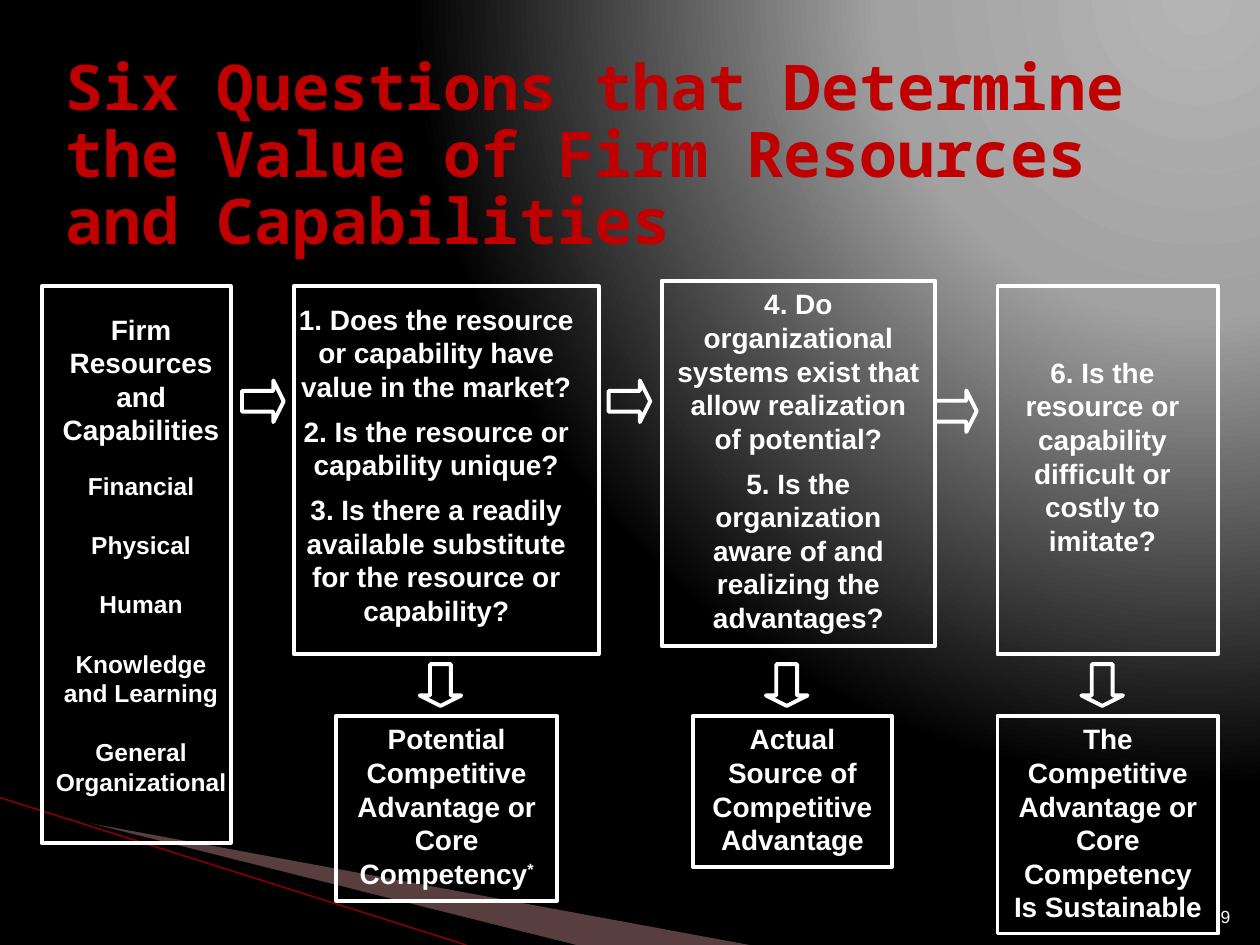
import dataclasses
import pptx
import pptx.util
import pptx.dml.color
import pptx.enum.shapes
import pptx.enum.text
import pptx.oxml
import pptx.oxml.ns

Cm, Pt = pptx.util.Cm, pptx.util.Pt
Kind = pptx.enum.shapes.MSO_SHAPE
Align = pptx.enum.text.PP_ALIGN
Anchor = pptx.enum.text.MSO_ANCHOR
qn = pptx.oxml.ns.qn
NS = 'xmlns:a="http://schemas.openxmlformats.org/drawingml/2006/main"'


@dataclasses.dataclass
class Theme:
    white: str = "FFFFFF"
    black: str = "000000"
    red: str = "C00000"
    rose: str = "DD9D9D"
    thread: str = "800000"
    glow: tuple = ((0, "B4B4B4"), (40, "A2A2A2"), (100, "000000"))
    sans: str = "Arial"
    mono: str = "Noto Sans Mono"
    title: float = 36
    body: float = 16
    item: float = 14
    note: float = 10
    edge: float = 2.25


theme = Theme()


def rgb(code):
    return pptx.dml.color.RGBColor.from_string(code)


def style(font, size, color=theme.white, name=theme.sans, bold=True):
    font.size, font.name, font.bold = Pt(size), name, bold
    font.color.rgb = rgb(color)


def write(shape, paras, align=Align.CENTER):
    frame = shape.text_frame
    frame.word_wrap = True
    frame.vertical_anchor = Anchor.TOP
    for i, (text, size, gap) in enumerate(paras):
        para = frame.paragraphs[0] if i == 0 else frame.add_paragraph()
        para.alignment = align
        para.space_before = Pt(gap)
        main, star, _ = text.partition("*")
        for part in filter(None, (main, star)):
            run = para.add_run()
            run.text = part
            style(run.font, size)
            if part == "*":
                run.font._element.set("baseline", "30000")


def outline(slide, kind, box):
    shape = slide.shapes.add_shape(kind, *map(Cm, box))
    shape.shadow.inherit = False
    shape.fill.background()
    shape.line.color.rgb = rgb(theme.white)
    shape.line.width = Pt(theme.edge)
    return shape


def panel(slide, box, paras, inner=None):
    shape = outline(slide, Kind.RECTANGLE, box)
    if inner:
        left, top, wide, high = inner
        place = (box[0] + left, box[1] + top, wide, high)
        shape = slide.shapes.add_textbox(*map(Cm, place))
    write(shape, paras)


def arrow(slide, kind, left, top):
    shape = outline(slide, kind, (left, top, 0.84, 0.84))
    shape.adjustments[0] = 0.5
    shape.adjustments[1] = 0.25


def blade(slide, points, color, alpha):
    spots = [(Cm(x), Cm(y)) for x, y in points]
    build = slide.shapes.build_freeform(*spots[0])
    build.add_line_segments(spots[1:], close=True)
    shape = build.convert_to_shape()
    shape.shadow.inherit = False
    shape.fill.solid()
    shape.fill.fore_color.rgb = rgb(color)
    shape.line.fill.background()
    tint = shape.fill._xPr.find(".//" + qn("a:srgbClr"))
    tint.append(pptx.oxml.parse_xml(f'<a:alpha {NS} val="{alpha * 1000}"/>'))


def backdrop(slide):
    fill = slide.background.fill
    fill.gradient()
    grad = fill._xPr.find(qn("a:gradFill"))
    stops = "".join(
        f'<a:gs pos="{pos * 1000}"><a:srgbClr val="{code}"/></a:gs>'
        for pos, code in theme.glow)
    grad.getparent().replace(grad, pptx.oxml.parse_xml(
        f'<a:gradFill {NS} rotWithShape="1"><a:gsLst>{stops}</a:gsLst>'
        '<a:path path="circle"><a:fillToRect l="95000" t="-106000" '
        'r="5000" b="206000"/></a:path></a:gradFill>'))
    blade(slide, [(1.4, 16.52), (15.11, 19.05), (11.58, 19.05)], theme.rose, 40)
    blade(slide, [(1.35, 16.48), (11.61, 19.05), (9.45, 19.05)], theme.black, 100)
    line = slide.shapes.add_connector(
        pptx.enum.shapes.MSO_CONNECTOR.STRAIGHT,
        Cm(0), Cm(16.08), Cm(9.4), Cm(19.05))
    line.line.color.rgb = rgb(theme.thread)
    line.line.width = Pt(0.95)
    line._element.spPr.append(pptx.oxml.parse_xml(f"<a:effectLst {NS}/>"))


def heading(slide, box, text):
    title = slide.shapes.title
    title.left, title.top, title.width, title.height = map(Cm, box)
    frame = title.text_frame
    frame.word_wrap = True
    frame.vertical_anchor = Anchor.MIDDLE
    para = frame.paragraphs[0]
    para.alignment = Align.LEFT
    para.line_spacing = 0.89
    run = para.add_run()
    run.text = text
    style(run.font, theme.title, theme.red, theme.mono)


def number(slide, box, text):
    shape = slide.shapes.add_textbox(*map(Cm, box))
    write(shape, [(text, theme.note, 0)], Align.RIGHT)
    shape.text_frame.vertical_anchor = Anchor.BOTTOM
    shape.text_frame.paragraphs[0].runs[0].font.bold = False


def assets(slide, box):
    paras = [("Firm Resources and Capabilities", theme.body, 0)]
    for text, gap in (("Financial", 14), ("Physical", 17), ("Human", 17),
                      ("Knowledge", 17), ("and Learning", 0),
                      ("General", 17), ("Organizational", 0)):
        paras.append((text, theme.item, gap))
    panel(slide, box, paras, (0, 0.4, 4.01, 10.08))


def asks(slide, box, texts, inner=None):
    paras = [(text, theme.body, 6.4 if i else 0) for i, text in enumerate(texts)]
    panel(slide, box, paras, inner)


def result(slide, box, texts):
    panel(slide, box, [(text, theme.body, 0) for text in texts])


def main():
    deck = pptx.Presentation()
    deck.slide_width, deck.slide_height = Cm(25.4), Cm(19.05)
    slide = deck.slides.add_slide(deck.slide_layouts[5])
    backdrop(slide)
    heading(slide, (1.07, 1.27, 22.86, 3.81),
            "Six Questions that Determine the Value of Firm Resources "
            "and Capabilities")
    number(slide, (24.03, 17.8, 1.02, 1.02), "9")

    top, low = 5.77, 14.43
    assets(slide, (0.84, top, 3.81, 11.23))
    asks(slide, (5.92, top, 6.15, 7.42), [
        "1. Does the resource or capability have value in the market?",
        "2. Is the resource or capability unique?",
        "3. Is there a readily available substitute for the resource or "
        "capability?"], (-0.2, 0.2, 6.15, 6.91))
    asks(slide, (13.34, 5.66, 5.51, 7.37), [
        "4. Do organizational systems exist that allow realization of "
        "potential?",
        "5. Is the organization aware of and realizing the advantages?"])
    asks(slide, (20.11, top, 4.45, 7.42), [
        "6. Is the resource or capability difficult or costly to imitate?"],
        (0.21, 1.27, 3.81, 4.32))

    result(slide, (6.78, low, 4.45, 3.73),
           ["Potential Competitive", "Advantage or Core Competency*"])
    result(slide, (13.97, low, 4.01, 3.05),
           ["Actual Source of", "Competitive Advantage"])
    result(slide, (20.11, low, 4.45, 4.39),
           ["The Competitive Advantage or Core Competency Is Sustainable"])

    for left, y in ((4.88, 7.67), (12.27, 7.67), (18.85, 7.87)):
        arrow(slide, Kind.RIGHT_ARROW, left, y)
    for left in (8.46, 15.44, 21.8):
        arrow(slide, Kind.DOWN_ARROW, left, 13.39)
    deck.save("out.pptx")


if __name__ == "__main__":
    main()
